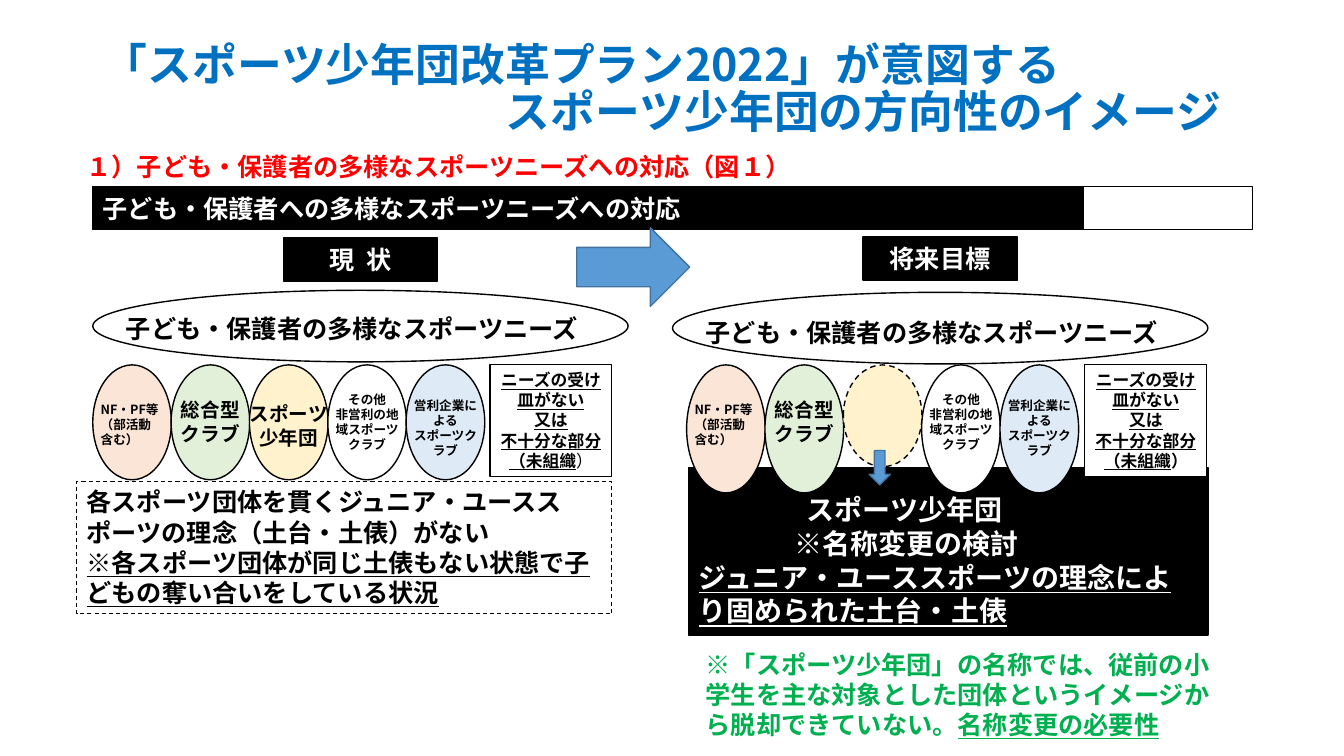
import pptx
import pptx.util
import pptx.dml.color
import pptx.enum.dml
import pptx.enum.shapes
import pptx.enum.text
import pptx.oxml
import pptx.oxml.ns

Inches = pptx.util.Inches
KIND = pptx.enum.shapes.MSO_SHAPE
ALIGN = pptx.enum.text.PP_ALIGN
MID = pptx.enum.text.MSO_ANCHOR.MIDDLE
FONT = "Noto Sans CJK JP"
HEX = {
    "black": "000000", "white": "FFFFFF", "red": "FF0000", "green": "00B050",
    "title": "0070C0", "arrow": "5B9BD5", "edge": "43739E",
    "peach": "FBE5D6", "mint": "E2F0D9", "cream": "FFF2CC", "sky": "DEEBF7",
}
NEEDS = "子ども・保護者の多様なスポーツニーズ"
CLUBS = [
    ("peach", 0.82, 3.94, 9, ALIGN.LEFT, ["NF・PF等", "（部活動含む）"]),
    ("mint", 0.9, 3.9, 14, ALIGN.CENTER, ["総合型クラブ"]),
    ("cream", 1.09, 3.94, 14, ALIGN.CENTER, ["スポーツ", "少年団"]),
    ("white", 0.91, 3.84, 9, ALIGN.CENTER, ["その他", "非営利の地域スポーツクラブ"]),
    ("sky", 0.91, 3.9, 9, ALIGN.CENTER, ["営利企業による", "スポーツクラブ"]),
]
PITCH = 0.777
ROW = 3.62


def rgb(name):
    return pptx.dml.color.RGBColor.from_string(HEX[name])


def style(run, size, color, under=False, bold=True):
    font = run.font
    font.name = FONT
    font.size = pptx.util.Pt(size)
    font.bold = bold
    font.underline = under
    font.color.rgb = rgb(color)
    east = pptx.oxml.ns.qn("a:ea")
    run._r.get_or_add_rPr().get_or_add_latin().addnext(
        pptx.oxml.parse_xml(
            f'<a:ea {pptx.oxml.ns.nsdecls("a")} typeface="{FONT}"/>'))


def write(shape, lines, size, color="black", align=ALIGN.LEFT, ratio=1.2):
    frame = shape.text_frame
    frame.word_wrap = True
    frame.text = "\n".join(lines)
    for para in frame.paragraphs:
        para.alignment = align
        para.line_spacing = pptx.util.Pt(round(size * ratio, 1))
        for run in para.runs:
            style(run, size, color)
    return frame


def indent(para, gap):
    para._p.get_or_add_pPr().set("marL", str(Inches(gap)))


def shape(slide, kind, box, fill=None, line="black", width=1, dash=False):
    item = slide.shapes.add_shape(kind, *map(Inches, box))
    item.shadow.inherit = False
    if fill:
        item.fill.solid()
        item.fill.fore_color.rgb = rgb(fill)
    else:
        item.fill.background()
    item.line.color.rgb = rgb(line)
    item.line.width = pptx.util.Pt(width)
    if dash:
        item.line.dash_style = pptx.enum.dml.MSO_LINE.DASH
    item.text_frame.vertical_anchor = pptx.enum.text.MSO_ANCHOR.TOP
    return item


def label(slide, box, lines, size, **look):
    text = slide.shapes.add_textbox(*map(Inches, box))
    return write(text, lines, size, **look)


def banner(slide, box, text, align=ALIGN.CENTER):
    frame = write(shape(slide, KIND.RECTANGLE, box, "black"), [text], 18, "white", align)
    frame.vertical_anchor = MID
    return frame


def needs(slide, left, top, gap):
    shape(slide, KIND.OVAL, (left, top, 5.31, 0.71), "white")
    label(slide, (left + 0.23, top + gap, 4.85, 0.4), [NEEDS], 18)


def clubs(slide, left, height, ghost=None):
    for i, club in enumerate(CLUBS):
        tall = 1.01 if i == ghost else height
        shape(slide, KIND.OVAL, (left + i * PITCH, ROW, 0.78, tall), club[0], dash=i == ghost)
    for i, (_, wide, top, size, align, lines) in enumerate(CLUBS):
        if i != ghost:
            mid = left + i * PITCH + 0.39
            label(slide, (mid - wide / 2, top, wide, 0.57), lines, size, align=align)


def unmet(slide, left, fill, bold):
    box = shape(slide, KIND.RECTANGLE, (left, ROW, 1.21, 1.11), fill, width=0.75)
    lines = ["ニーズの受け皿がない", "又は", "不十分な部分（未組織"]
    frame = write(box, lines, 12, align=ALIGN.CENTER)
    for para in frame.paragraphs:
        para.runs[0].font.underline = True
    end = frame.paragraphs[-1].add_run()
    end.text = "）"
    style(end, 12, "black", bold=bold)


def state(slide):
    box = shape(slide, KIND.RECTANGLE, (0.76, 4.78, 5.31, 1.31), width=0.75, dash=True)
    frame = write(box, [
        "各スポーツ団体を貫くジュニア・ユーススポーツの理念（土台・土俵）がない",
        "※各スポーツ団体が同じ土俵もない状態で子どもの奪い合いをしている状況"], 18)
    frame.paragraphs[1].runs[0].font.underline = True


def base(slide):
    box = shape(slide, KIND.RECTANGLE, (6.83, 4.64, 5.15, 1.66), "black")
    frame = write(box, [
        "スポーツ少年団", "※名称変更の検討",
        "ジュニア・ユーススポーツの理念により固められた土台・土俵"], 20, "white")
    frame.margin_top = Inches(0.25)
    indent(frame.paragraphs[0], 1.07)
    indent(frame.paragraphs[1], 0.95)
    frame.paragraphs[2].runs[0].font.underline = True


def note(slide):
    frame = label(slide, (6.9, 6.39, 5.38, 1.01), [
        "※「スポーツ少年団」の名称では、従前の小学生を主な対象とした団体というイメージから脱却できていない。"],
        18, color="green")
    end = frame.paragraphs[0].add_run()
    end.text = "名称変更の必要性"
    style(end, 18, "green", under=True)


def title(slide):
    frame = label(slide, (0.92, 0.4, 11.5, 1), [
        "「スポーツ少年団改革プラン2022」が意図する",
        "スポーツ少年団の方向性のイメージ"], 32, color="title", ratio=1.05)
    frame.vertical_anchor = MID
    indent(frame.paragraphs[1], 4)


def main():
    deck = pptx.Presentation()
    deck.slide_width = Inches(13.33)
    deck.slide_height = Inches(7.5)
    slide = deck.slides.add_slide(deck.slide_layouts[6])

    title(slide)
    label(slide, (0.76, 1.45, 9.26, 0.4),
          ["１）子ども・保護者の多様なスポーツニーズへの対応（図１）"], 18, color="red")
    banner(slide, (0.92, 1.85, 9.82, 0.43),
           "子ども・保護者への多様なスポーツニーズへの対応", ALIGN.LEFT)
    shape(slide, KIND.RECTANGLE, (10.74, 1.85, 1.68, 0.43), "white")
    now = banner(slide, (2.81, 2.36, 1.53, 0.43), "現 状")
    now.paragraphs[0].runs[0]._r.get_or_add_rPr().set("spc", "200")
    banner(slide, (8.56, 2.35, 1.53, 0.43), "将来目標")
    shape(slide, KIND.RIGHT_ARROW, (5.72, 2.26, 1.12, 0.78), "arrow", "edge")

    needs(slide, 0.92, 2.88, 0.18)
    clubs(slide, 0.92, 1.14)
    unmet(slide, 4.86, None, False)
    state(slide)

    base(slide)
    needs(slide, 6.67, 2.9, 0.2)
    clubs(slide, 6.81, 1.27, ghost=2)
    unmet(slide, 10.76, "white", True)
    shape(slide, KIND.DOWN_ARROW, (8.62, 4.47, 0.21, 0.34), "arrow", "edge")
    note(slide)
    deck.save("out.pptx")


if __name__ == "__main__":
    main()
